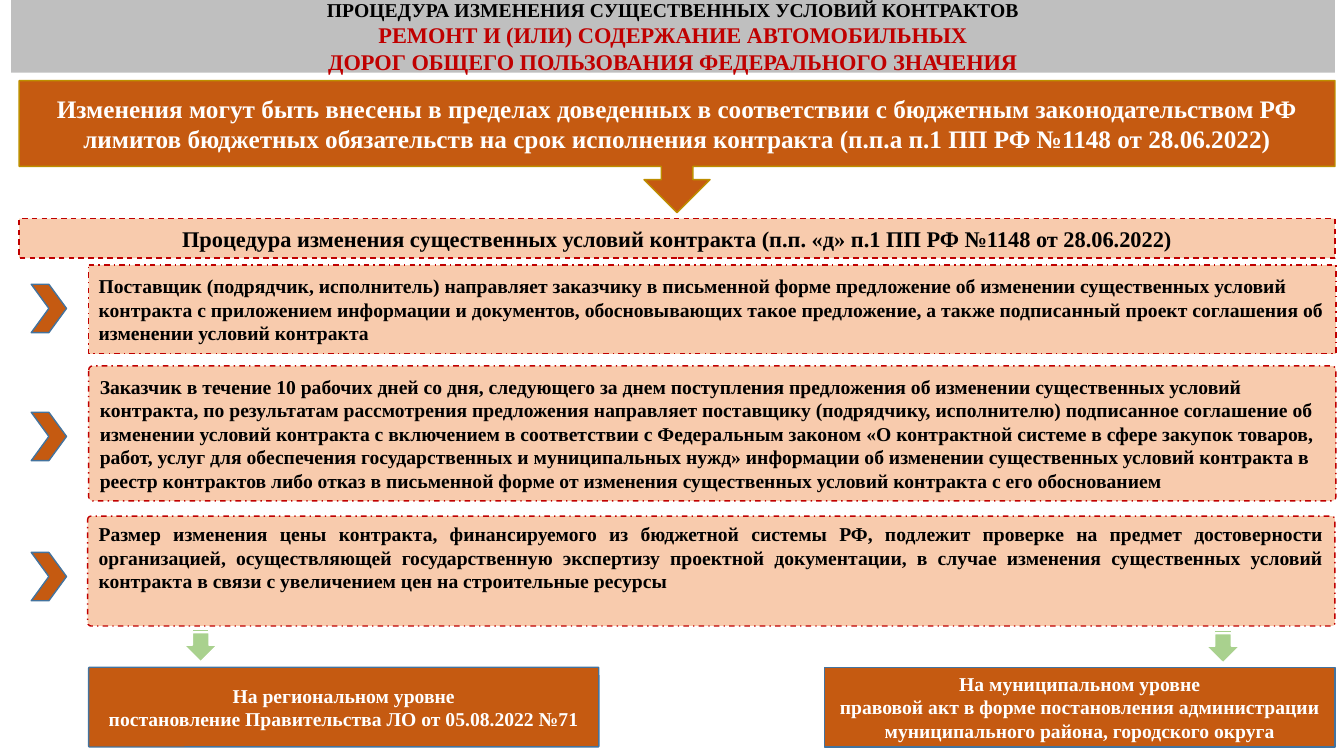
from pptx import Presentation
from pptx.dml.color import RGBColor
from pptx.enum.dml import MSO_LINE
from pptx.enum.shapes import MSO_SHAPE
from pptx.enum.text import MSO_ANCHOR, MSO_AUTO_SIZE, PP_ALIGN
from pptx.util import Pt

PX = 9144  # EMU in one px, 100 px to the inch
COLORS = {
    "black": "000000", "white": "FFFFFF", "gray": "BFBFBF", "red": "C00000",
    "rust": "C55A11", "peach": "F8CBAD", "blue": "43739E", "gold": "BD8E00",
    "green": "A9D18E",
}
FONT = "Times New Roman"

STEPS = [
    # box, corner, chevron top, anchor, alignment, text
    ((88, 263, 1237, 88), 0, 282, MSO_ANCHOR.MIDDLE, PP_ALIGN.LEFT,
     "Поставщик (подрядчик, исполнитель) направляет заказчику в письменной форме "
     "предложение об изменении существенных условий контракта с приложением информации "
     "и документов, обосновывающих такое предложение, а также подписанный проект "
     "соглашения об изменении условий контракта"),
    ((88, 363, 1237, 134), 0.03, 409, MSO_ANCHOR.MIDDLE, PP_ALIGN.LEFT,
     "Заказчик в течение 10 рабочих дней со дня, следующего за днем поступления "
     "предложения об изменении существенных условий контракта, по результатам "
     "рассмотрения предложения направляет поставщику (подрядчику, исполнителю) "
     "подписанное соглашение об изменении условий контракта с включением в соответствии "
     "с Федеральным законом «О контрактной системе в сфере закупок товаров, работ, услуг "
     "для обеспечения государственных и муниципальных нужд» информации об изменении "
     "существенных условий контракта в реестр контрактов либо отказ в письменной форме "
     "от изменения существенных условий контракта с его обоснованием"),
    ((87, 512, 1237, 109), 0.03, 548, MSO_ANCHOR.TOP, PP_ALIGN.JUSTIFY,
     "Размер изменения цены контракта, финансируемого из бюджетной системы РФ, подлежит "
     "проверке на предмет достоверности организацией, осуществляющей государственную "
     "экспертизу проектной документации, в случае изменения существенных условий "
     "контракта в связи с увеличением цен на строительные ресурсы"),
]
LEVELS = [
    # box, corner, arrow offset from the box, lines
    ((88, 662, 506, 79), 0.01, (94, -39),
     ["На региональном уровне", "постановление Правительства ЛО от 05.08.2022 №71"]),
    ((818, 662, 506, 79), 0, (378, -38),
     ["На муниципальном уровне",
      "правовой акт в форме постановления администрации "
      "муниципального района, городского округа"]),
]


def rgb(name):
    return RGBColor.from_string(COLORS[name])


def assign(target, values):
    for name, value in values.items():
        setattr(target, name, value)


def add_box(slide, preset, box, fill, line, dash=None, adjustments=()):
    shape = slide.shapes.add_shape(preset, *(length * PX for length in box))
    for index, value in enumerate(adjustments):
        shape.adjustments[index] = value
    shape.shadow.inherit = False
    shape.fill.solid()
    shape.fill.fore_color.rgb = rgb(fill)
    shape.line.color.rgb = rgb(line)
    assign(shape.line, {"width": Pt(1), "dash_style": dash})
    return shape


def write(shape, lines, align=PP_ALIGN.CENTER, anchor=MSO_ANCHOR.MIDDLE):
    """Fill the shape with one paragraph per (text, size, color) line."""
    frame = shape.text_frame
    assign(frame, {"word_wrap": True, "auto_size": MSO_AUTO_SIZE.NONE,
                   "vertical_anchor": anchor})
    for index, (text, size, color) in enumerate(lines):
        paragraph = frame.add_paragraph() if index else frame.paragraphs[0]
        paragraph.alignment = align
        run = paragraph.add_run()
        run.text = text
        assign(run.font, {"name": FONT, "size": Pt(size), "bold": True})
        run.font.color.rgb = rgb(color)


def format_title(title, box):
    left, top, width, height = (length * PX for length in box)
    assign(title, {"left": left, "top": top, "width": width, "height": height})
    title.fill.solid()
    title.fill.fore_color.rgb = rgb("gray")
    write(title, [
        ("ПРОЦЕДУРА ИЗМЕНЕНИЯ СУЩЕСТВЕННЫХ УСЛОВИЙ КОНТРАКТОВ", 14, "black"),
        ("РЕМОНТ И (ИЛИ) СОДЕРЖАНИЕ АВТОМОБИЛЬНЫХ", 16, "red"),
        ("ДОРОГ ОБЩЕГО ПОЛЬЗОВАНИЯ ФЕДЕРАЛЬНОГО ЗНАЧЕНИЯ", 16, "red"),
    ])


def add_limits_callout(slide, box):
    callout = add_box(slide, MSO_SHAPE.DOWN_ARROW_CALLOUT, box, "rust", "gold",
                      adjustments=(0.24, 0.25, 0.25, 0.65))
    write(callout, [(
        "Изменения могут быть внесены в пределах доведенных в соответствии с бюджетным "
        "законодательством РФ лимитов бюджетных обязательств на срок исполнения контракта "
        "(п.п.а п.1 ПП РФ №1148 от 28.06.2022)", 18, "white")])


def add_procedure_heading(slide, box):
    heading = add_box(slide, MSO_SHAPE.RECTANGLE, box, "peach", "red", MSO_LINE.DASH)
    write(heading, [(
        "Процедура изменения существенных условий контракта "
        "(п.п. «д» п.1 ПП РФ №1148 от 28.06.2022)", 16, "black")])


def add_step(slide, box, corner, chevron_top, anchor, align, text):
    add_box(slide, MSO_SHAPE.CHEVRON, (31, chevron_top, 35, 48), "rust", "blue")
    step = add_box(slide, MSO_SHAPE.ROUNDED_RECTANGLE, box, "peach", "red",
                   MSO_LINE.DASH_DOT, (corner,))
    write(step, [(text, 14, "black")], align, anchor)


def add_level(slide, box, corner, arrow_offset, lines):
    level = add_box(slide, MSO_SHAPE.ROUNDED_RECTANGLE, box, "rust", "blue",
                    adjustments=(corner,))
    write(level, [(line, 14, "white") for line in lines])
    arrow_box = (box[0] + arrow_offset[0], box[1] + arrow_offset[1], 34, 33)
    arrow = add_box(slide, MSO_SHAPE.STRIPED_RIGHT_ARROW, arrow_box, "green", "white")
    arrow.rotation = 90


def main():
    deck = Presentation()
    assign(deck, {"slide_width": 1333 * PX, "slide_height": 750 * PX})
    slide = deck.slides.add_slide(deck.slide_layouts.get_by_name("Title Only"))
    format_title(slide.shapes.title, (11, 0, 1313, 72))
    add_limits_callout(slide, (19, 80, 1305, 131))
    add_procedure_heading(slide, (19, 217, 1305, 39))
    for step in STEPS:
        add_step(slide, *step)
    for level in LEVELS:
        add_level(slide, *level)
    deck.save("out.pptx")


if __name__ == "__main__":
    main()
